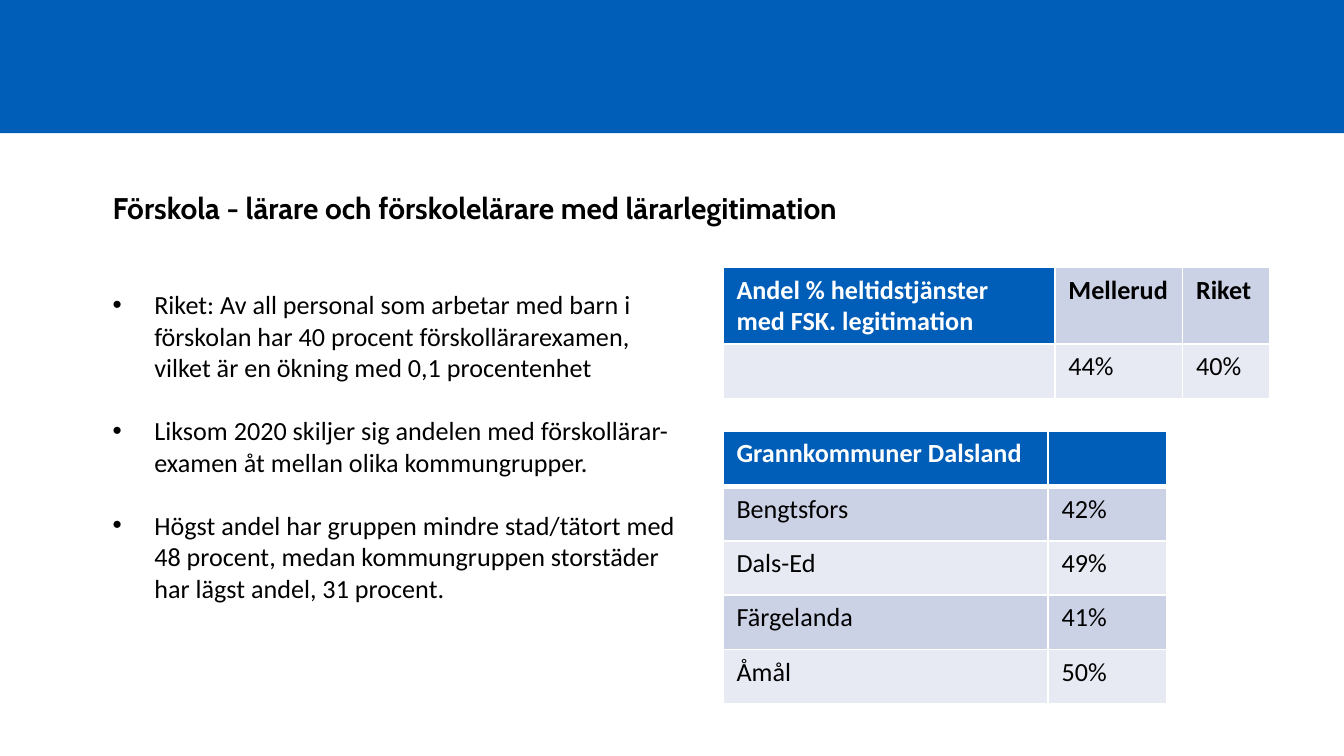
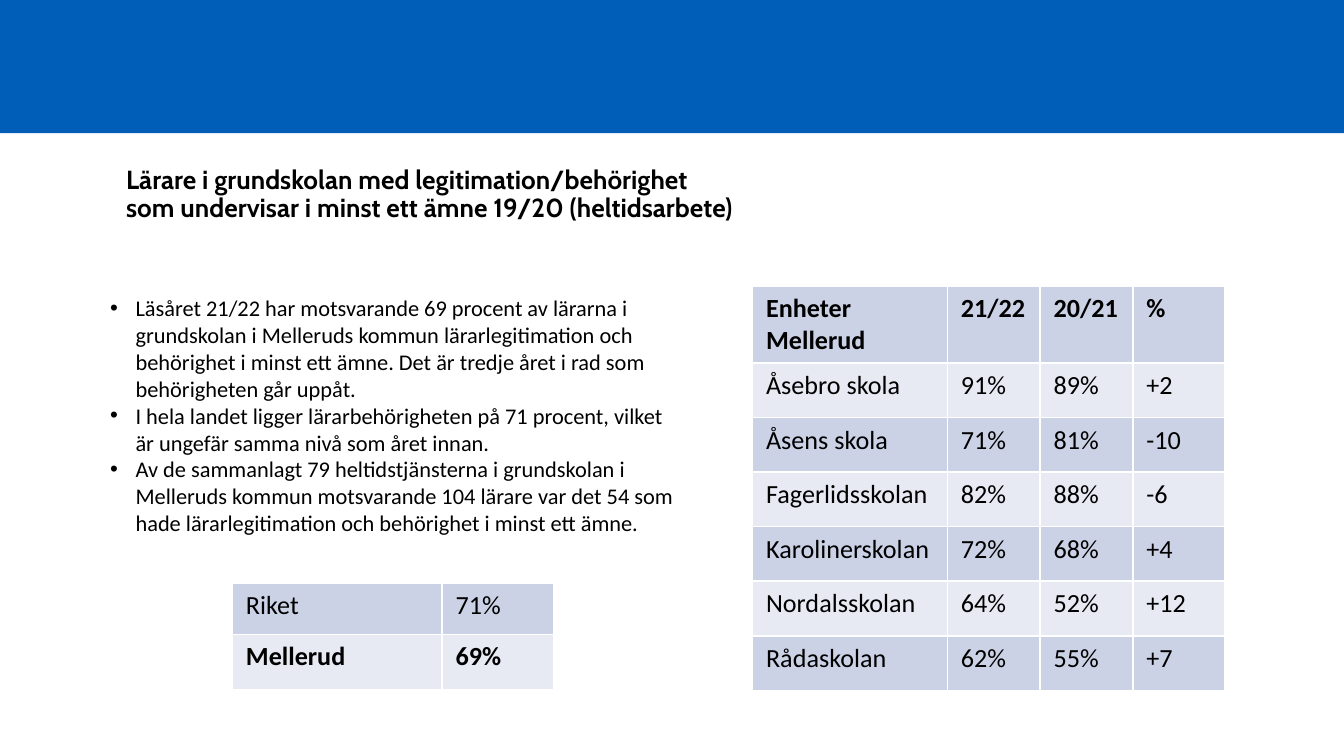
import pptx
import pptx.dml.color
import pptx.enum.shapes
import pptx.enum.text
import pptx.oxml.ns
import pptx.util
from lxml import etree
from pptx.util import Inches

WIDE = Inches(10)
BLUE, BLACK, WHITE = "005EB8", "000000", "FFFFFF"
SHADES = ["CCD2E6", "E7EAF3"]
HEAD, BODY = "Cabin", "Calibri"
ANCHOR = pptx.enum.text.MSO_ANCHOR

# Tables: "dark" counts the blue cells of the top row, "bold" is the bold row,
# "top" and "tall" are the heights of the first row and of the whole table.
SLIDES = [
    {
        "title": {
            "text": "Förskola - lärare och förskolelärare med lärarlegitimation",
            "at": (0.74, 1.44, 8.52, 0.8), "size": 16, "anchor": ANCHOR.TOP,
        },
        "body": {
            "at": (0.74, 2.1, 4.46, 2.46), "size": 14, "indent": 0.31, "gap": 17,
            "items": [
                "Riket: Av all personal som arbetar med barn i förskolan har 40 procent "
                "förskollärarexamen, vilket är en ökning med 0,1 procentenhet",
                "Liksom 2020 skiljer sig andelen med förskollärar-examen åt mellan "
                "olika kommungrupper.",
                "Högst andel har gruppen mindre stad/tätort med 48 procent, medan "
                "kommungruppen storstäder har lägst andel, 31 procent.",
            ],
        },
        "tables": [
            {
                "at": (5.38, 1.99), "cols": [2.47, 0.95, 0.65], "top": 0.57,
                "tall": 0.98, "dark": 1, "bold": 0,
                "rows": [
                    ["Andel % heltidstjänster med FSK. legitimation", "Mellerud", "Riket"],
                    ["", "44%", "40%"],
                ],
            },
            {
                "at": (5.38, 3.21), "cols": [2.42, 0.88], "top": 0.41,
                "tall": 2.03, "dark": 2, "bold": 0,
                "rows": [
                    ["Grannkommuner Dalsland", ""],
                    ["Bengtsfors", "42%"],
                    ["Dals-Ed", "49%"],
                    ["Färgelanda", "41%"],
                    ["Åmål", "50%"],
                ],
            },
        ],
    },
    {
        "title": {
            "text": "Lärare i grundskolan med legitimation/behörighet\n"
                    "som undervisar i minst ett ämne 19/20 (heltidsarbete)",
            "at": (0.84, 0.91, 9.22, 0.8), "size": 14, "anchor": ANCHOR.BOTTOM,
        },
        "body": {
            "at": (0.72, 2.14, 4.42, 1.92), "size": 12, "indent": 0.19, "gap": 0,
            "items": [
                "Läsåret 21/22 har motsvarande 69 procent av lärarna i grundskolan i "
                "Melleruds kommun lärarlegitimation och behörighet i minst ett ämne. "
                "Det är tredje året i rad som behörigheten går uppåt.",
                "I hela landet ligger lärarbehörigheten på 71 procent, vilket är "
                "ungefär samma nivå som året innan.",
                "Av de sammanlagt 79 heltidstjänsterna i grundskolan i Melleruds kommun "
                "motsvarande 104 lärare var det 54 som hade lärarlegitimation och "
                "behörighet i minst ett ämne.",
            ],
        },
        "tables": [
            {
                "at": (1.73, 4.34), "cols": [1.56, 0.83], "top": 0.38,
                "tall": 0.79, "dark": 0, "bold": 1,
                "rows": [["Riket", "71%"], ["Mellerud", "69%"]],
            },
            {
                "at": (5.6, 2.13), "cols": [1.45, 0.69, 0.69, 0.68], "top": 0.57,
                "tall": 3.01, "dark": 0, "bold": 0,
                "rows": [
                    ["Enheter Mellerud", "21/22", "20/21", "%"],
                    ["Åsebro skola", "91%", "89%", "+2"],
                    ["Åsens skola", "71%", "81%", "-10"],
                    ["Fagerlidsskolan", "82%", "88%", "-6"],
                    ["Karolinerskolan", "72%", "68%", "+4"],
                    ["Nordalsskolan", "64%", "52%", "+12"],
                    ["Rådaskolan", "62%", "55%", "+7"],
                ],
            },
        ],
    },
]


def color(code):
    return pptx.dml.color.RGBColor.from_string(code)


def child(node, tag, **attrs):
    return etree.SubElement(node, pptx.oxml.ns.qn(tag), **attrs)


def style(para, size, face=BODY, tint=BLACK, bold=False):
    font = para.font
    font.name, font.size, font.bold = face, pptx.util.Pt(size), bold
    font.color.rgb = color(tint)


def add_band(slide):
    band = slide.shapes.add_shape(
        pptx.enum.shapes.MSO_SHAPE.RECTANGLE, 0, 0, WIDE, Inches(0.99))
    band.shadow.inherit = False
    band.fill.solid()
    band.fill.fore_color.rgb = color(BLUE)
    band.line.fill.background()


def add_box(slide, at):
    frame = slide.shapes.add_textbox(*map(Inches, at)).text_frame
    frame.word_wrap = True
    return frame


def add_title(slide, title):
    frame = add_box(slide, title["at"])
    frame.margin_top = 0
    frame.vertical_anchor = title["anchor"]
    para = frame.paragraphs[0]
    para.text = title["text"]
    para.line_spacing = 0.9
    style(para, title["size"], HEAD, bold=True)


def add_body(slide, body):
    frame = add_box(slide, body["at"])
    frame.auto_size = pptx.enum.text.MSO_AUTO_SIZE.SHAPE_TO_FIT_TEXT
    step = Inches(body["indent"])
    for i, text in enumerate(body["items"]):
        para = frame.add_paragraph() if i else frame.paragraphs[0]
        para.text = text
        if i:
            para.space_before = pptx.util.Pt(body["gap"])
        props = para._p.get_or_add_pPr()
        props.set("marL", str(step))
        props.set("indent", str(-step))
        child(props, "a:buFont", typeface="Arial")
        child(props, "a:buChar", char="•")
        style(para, body["size"])


def add_edges(cell, top, bottom):
    """Draw white cell borders, with the top and bottom widths in points."""
    props = cell._tc.get_or_add_tcPr()
    for side, width in zip("LRTB", (1, 1, top, bottom)):
        line = child(props, f"a:ln{side}", w=str(pptx.util.Pt(width)))
        child(child(line, "a:solidFill"), "a:srgbClr", val=WHITE)


def add_grid(slide, data):
    rows, cols = data["rows"], data["cols"]
    left, top = data["at"]
    table = slide.shapes.add_table(
        len(rows), len(cols), Inches(left), Inches(top),
        Inches(sum(cols)), Inches(data["tall"])).table
    for col, width in zip(table.columns, cols):
        col.width = Inches(width)
    rest = (data["tall"] - data["top"]) / (len(rows) - 1)
    full = data["dark"] == len(cols)
    for i, row in enumerate(rows):
        table.rows[i].height = Inches(rest if i else data["top"])
        for j, text in enumerate(row):
            cell = table.cell(i, j)
            dark = i == 0 and j < data["dark"]
            add_edges(cell, 3 if full and i == 1 else 1, 3 if full and i == 0 else 1)
            cell.fill.solid()
            cell.fill.fore_color.rgb = color(BLUE if dark else SHADES[(i + full) % 2])
            para = cell.text_frame.paragraphs[0]
            para.text = text
            style(para, 14, tint=WHITE if dark else BLACK, bold=i == data["bold"])


def main():
    deck = pptx.Presentation()
    deck.slide_width, deck.slide_height = WIDE, WIDE * 9 // 16
    for data in SLIDES:
        slide = deck.slides.add_slide(deck.slide_layouts[6])
        add_band(slide)
        add_title(slide, data["title"])
        for grid in data["tables"]:
            add_grid(slide, grid)
        add_body(slide, data["body"])
    deck.save("out.pptx")


if __name__ == "__main__":
    main()
